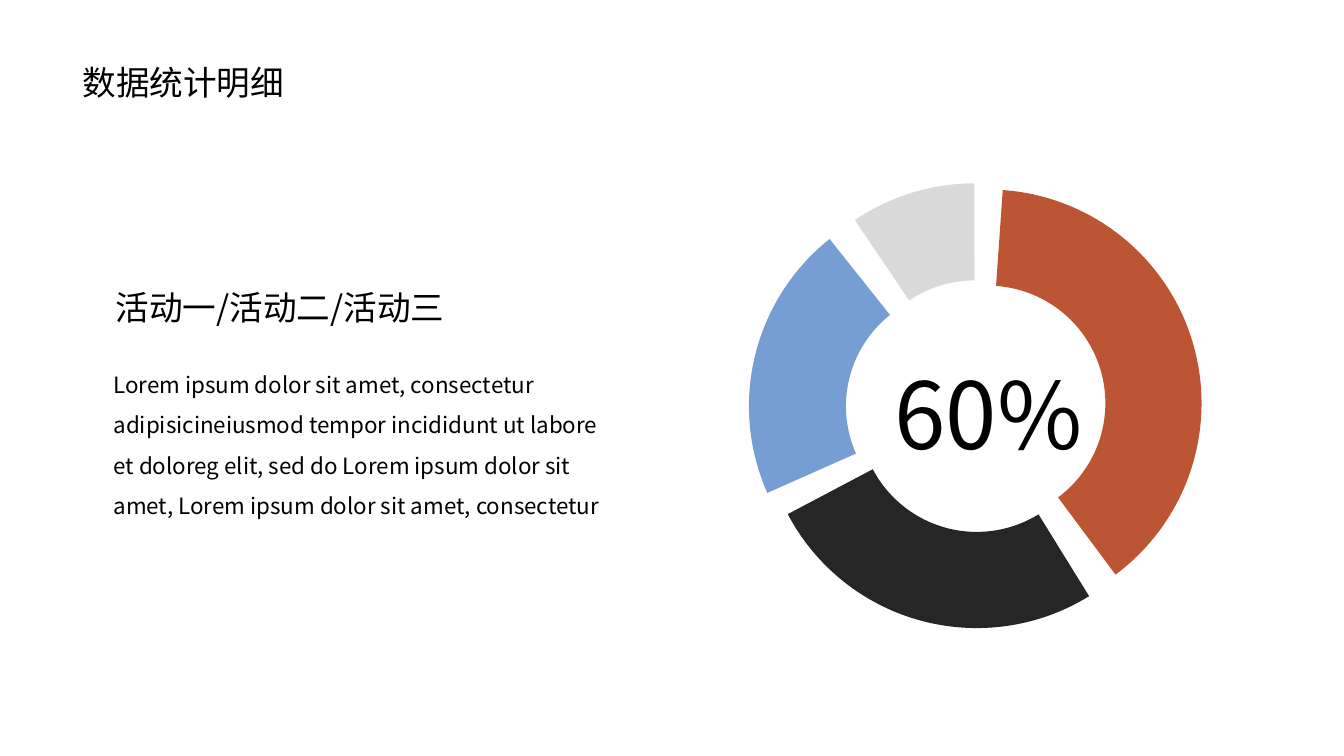
from pptx import Presentation
from pptx.dml.color import RGBColor
from pptx.enum.shapes import MSO_SHAPE as SHAPE
from pptx.enum.text import MSO_AUTO_SIZE as AUTO_SIZE, PP_ALIGN as ALIGN
from pptx.util import Pt

FONT = "Noto Sans CJK SC"
COLORS = {
    "text": "000000",
    "red": "BB5534",
    "black": "262626",
    "blue": "769ED3",
    "grey": "D9D9D9",
}
RING_SIZE = 305.3
ADJ_PER_DEGREE = 0.6
BODY = (
    "Lorem ipsum dolor sit amet, consectetur adipisicineiusmod tempor "
    "incididunt ut labore et doloreg elit, sed do Lorem ipsum dolor sit amet, "
    "Lorem ipsum dolor sit amet, consectetur"
)
SEGMENTS = [
    ("red", 553, 135.4, 0, 274, 53.31, 0.225),
    ("black", 545, 143.3, 180, 238.28, 332.17, 0.225),
    ("blue", 535, 137.5, 277.8, 238.28, 313.69, 0.227),
    ("grey", 543.6, 131, 341.5, 254.38, 288.41, 0.227),
]


def color(name):
    return RGBColor.from_string(COLORS[name])


def add_segment(s, name, left, top, rotation, start, end, thickness):
    sp = s.shapes.add_shape(
        SHAPE.BLOCK_ARC, Pt(left), Pt(top), Pt(RING_SIZE), Pt(RING_SIZE)
    )
    sp.adjustments[0] = start * ADJ_PER_DEGREE
    sp.adjustments[1] = end * ADJ_PER_DEGREE
    sp.adjustments[2] = thickness
    sp.rotation = rotation
    sp.shadow.inherit = False
    sp.fill.solid()
    sp.fill.fore_color.rgb = color(name)
    sp.line.fill.background()


def add_text(s, text, left, top, width, height, size, align=ALIGN.LEFT, spacing=1.0):
    sp = s.shapes.add_textbox(Pt(left), Pt(top), Pt(width), Pt(height))
    tf = sp.text_frame
    tf.word_wrap = True
    tf.auto_size = AUTO_SIZE.SHAPE_TO_FIT_TEXT
    p = tf.paragraphs[0]
    p.alignment = align
    p.line_spacing = spacing
    r = p.add_run()
    r.text = text
    r.font.size = Pt(size)
    r.font.name = FONT
    r.font.color.rgb = color("text")
    r_pr = r.font._element
    ea = r_pr.makeelement(
        "{http://schemas.openxmlformats.org/drawingml/2006/main}ea",
        {"typeface": FONT},
    )
    r_pr.append(ea)


def main():
    prs = Presentation()
    prs.slide_width = Pt(960)
    prs.slide_height = Pt(540)
    s = prs.slides.add_slide(prs.slide_layouts[6])
    for segment in SEGMENTS:
        add_segment(s, *segment)
    add_text(s, "60%", 632, 251.3, 150, 87, 66)
    add_text(s, "数据统计明细", 51.8, 41, 168, 36, 24)
    add_text(s, "活动一/活动二/活动三", 64, 201.6, 272, 36, 24, ALIGN.CENTER)
    add_text(s, BODY, 74, 252, 363, 120, 16, spacing=1.5)
    prs.save("out.pptx")


if __name__ == "__main__":
    main()
